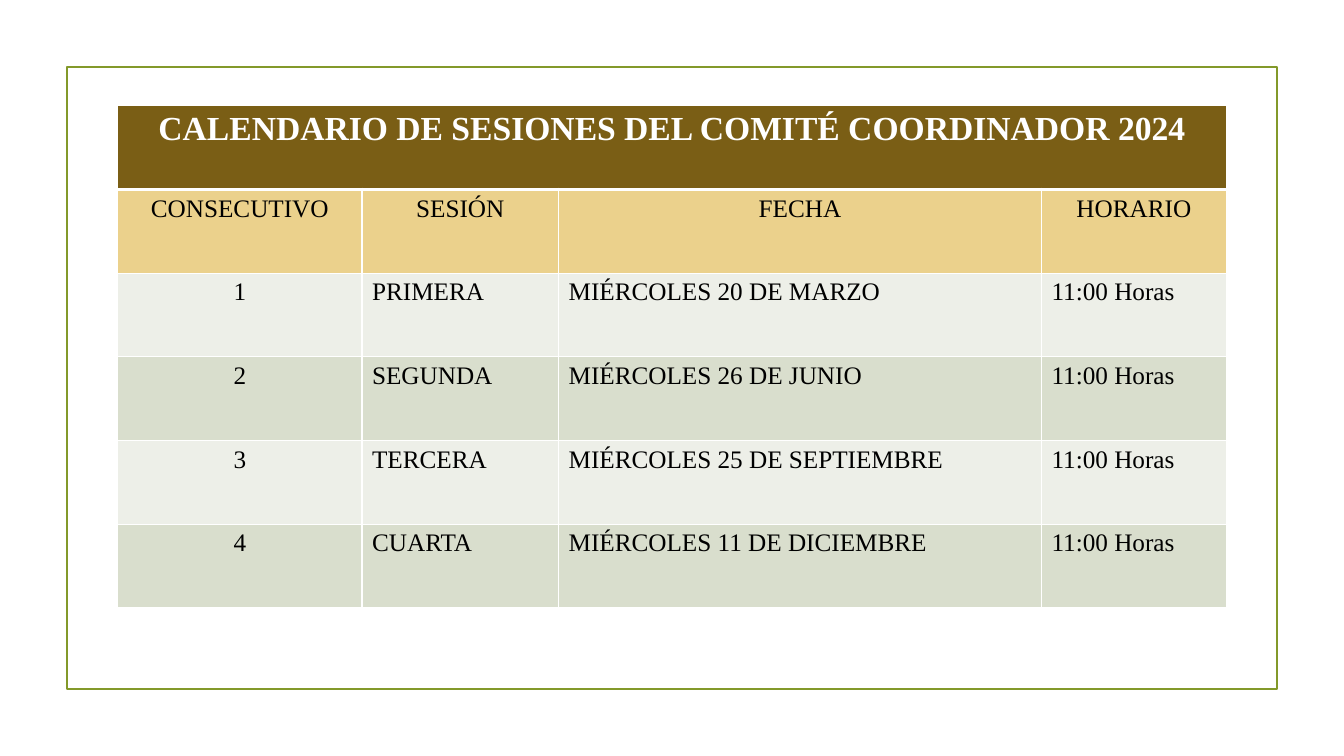
from lxml.etree import SubElement
from pptx import Presentation
from pptx.dml.color import RGBColor
from pptx.enum.shapes import MSO_SHAPE as Shape
from pptx.enum.text import PP_ALIGN as Align
from pptx.oxml.ns import qn
from pptx.util import Inches, Pt

WHITE = RGBColor(0xFF, 0xFF, 0xFF)
BLACK = RGBColor(0x00, 0x00, 0x00)
OLIVE = RGBColor(0x83, 0x99, 0x2A)
BROWN = RGBColor(0x7A, 0x5E, 0x15)
SAND = RGBColor(0xEB, 0xD1, 0x8C)
BANDS = RGBColor(0xED, 0xEF, 0xE8), RGBColor(0xD9, 0xDE, 0xCD)

TITLE = "CALENDARIO DE SESIONES DEL COMITÉ COORDINADOR 2024"
HEADINGS = "CONSECUTIVO", "SESIÓN", "FECHA", "HORARIO"
SESSIONS = (
    ("PRIMERA", "20 DE MARZO"),
    ("SEGUNDA", "26 DE JUNIO"),
    ("TERCERA", "25 DE SEPTIEMBRE"),
    ("CUARTA", "11 DE DICIEMBRE"),
)
COLUMN_WIDTHS = 29.1, 23.4, 57.5, 22
ROW_HEIGHT = 9.96


def write(frame, text, font="Times New Roman", size=18, color=BLACK, bold=False, align=Align.LEFT):
    """Put formatted text in the first paragraph of a frame."""
    para = frame.paragraphs[0]
    para.alignment = align
    span = para.add_run()
    span.text = text
    span.font.name = font
    span.font.size = Pt(size)
    span.font.bold = bold
    span.font.color.rgb = color


class CalendarPage:
    """Slide builder on a grid of 160 columns by 90 rows."""

    def __init__(self, deck):
        """Add a blank page and measure one grid unit."""
        self.page = deck.slides.add_slide(deck.slide_layouts[6])
        self.column = deck.slide_width / 160
        self.row = deck.slide_height / 90

    def place(self, left, top, width, height):
        """Turn grid units into slide lengths."""
        return (int(left * self.column), int(top * self.row),
                int(width * self.column), int(height * self.row))

    def frame(self, *area):
        """Draw the outlined rectangle around the content."""
        box = self.page.shapes.add_shape(Shape.RECTANGLE, *self.place(*area))
        box.shadow.inherit = False
        box.fill.background()
        box.line.color.rgb = OLIVE
        box.line.width = Pt(1.25)

    def table(self, left, top, widths, row_height, row_count):
        """Add a table with the given column widths and equal rows."""
        area = self.place(left, top, sum(widths), row_height * row_count)
        table = self.page.shapes.add_table(row_count, len(widths), *area).table
        for column, width in zip(table.columns, widths):
            column.width = int(width * self.column)
        for row in table.rows:
            row.height = int(row_height * self.row)
        return table

    def cell(self, cell, text, fill, top=1, bottom=1, **text_format):
        """Fill, border and write one table cell."""
        properties = cell._tc.get_or_add_tcPr()
        for side, width in {"L": 1, "R": 1, "T": top, "B": bottom}.items():
            line = SubElement(properties, qn(f"a:ln{side}"), w=str(Pt(width)))
            paint = SubElement(line, qn("a:solidFill"))
            SubElement(paint, qn("a:srgbClr"), val=str(WHITE))
        cell.fill.solid()
        cell.fill.fore_color.rgb = fill
        if text:
            write(cell.text_frame, text, **text_format)


def main():
    """Build and save the session calendar."""
    deck = Presentation()
    deck.slide_width, deck.slide_height = Inches(13.33), Inches(7.5)
    page = CalendarPage(deck)
    page.frame(8, 8, 144, 74)
    table = page.table(14, 12.6, COLUMN_WIDTHS, ROW_HEIGHT, len(SESSIONS) + 2)

    for index, heading in enumerate(HEADINGS):
        page.cell(table.cell(0, index), "" if index else TITLE, BROWN, bottom=3,
                  size=24, color=WHITE, bold=True, align=Align.CENTER)
        page.cell(table.cell(1, index), heading, SAND, top=3, align=Align.CENTER)
    table.cell(0, 0).merge(table.cell(0, len(HEADINGS) - 1))

    for number, (session, date) in enumerate(SESSIONS, 1):
        values = str(number), session, f"MIÉRCOLES {date}", "11:00 Horas"
        for index, value in enumerate(values):
            page.cell(table.cell(number + 1, index), value, BANDS[(number - 1) % 2],
                      align=Align.LEFT if index else Align.CENTER)
    deck.save("out.pptx")


if __name__ == "__main__":
    main()
